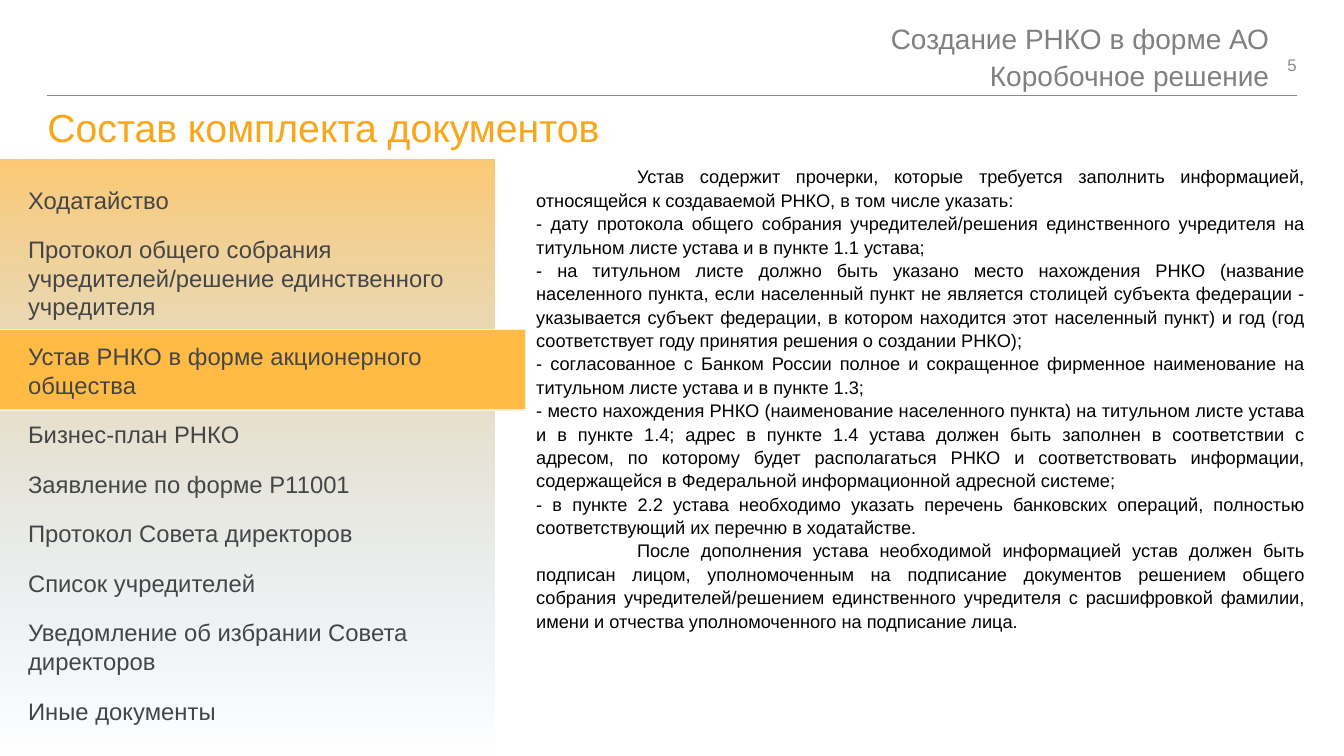
from lxml import etree
from pptx import Presentation
from pptx.dml.color import RGBColor
from pptx.enum.shapes import MSO_CONNECTOR, MSO_SHAPE
from pptx.enum.text import MSO_ANCHOR, MSO_AUTO_SIZE, PP_ALIGN
from pptx.oxml.ns import qn
from pptx.util import Inches, Pt

ORANGE = RGBColor(0xFA, 0xA6, 0x1A)
AMBER = RGBColor(0xFF, 0xBB, 0x44)
CREAM = RGBColor(0xFF, 0xEE, 0xCE)
PANEL_TOP = RGBColor(0xFC, 0xCA, 0x76)
PANEL_BOTTOM = RGBColor(0xA4, 0xC8, 0xE8)
RULE = RGBColor(0x88, 0x8A, 0x8D)
GREY = RGBColor(0x80, 0x80, 0x80)
NUMBER_GREY = RGBColor(0x8C, 0x8C, 0x8C)
DARK = RGBColor(0x44, 0x45, 0x47)
BLACK = RGBColor(0, 0, 0)

WIDTH, HEIGHT = 13.33, 7.5
MARGIN = 0.47
RIGHT = WIDTH - MARGIN

TITLE = "Состав комплекта документов"
HEADER = ["Создание РНКО в форме АО", "Коробочное решение"]
DOCUMENTS = [
    "Ходатайство",
    "Протокол общего собрания учредителей/решение единственного учредителя",
    "Устав РНКО в форме акционерного общества",
    "Бизнес-план РНКО",
    "Заявление по форме Р11001",
    "Протокол Совета директоров",
    "Список учредителей",
    "Уведомление об избрании Совета директоров",
    "Иные документы",
]
CHARTER = [
    "Устав содержит прочерки, которые требуется заполнить информацией, относящейся к создаваемой РНКО, в том числе указать:",
    "- дату протокола общего собрания учредителей/решения единственного учредителя на титульном листе устава и в пункте 1.1 устава;",
    "- на титульном листе должно быть указано место нахождения РНКО (название населенного пункта, если населенный пункт не является столицей субъекта федерации - указывается субъект федерации, в котором находится этот населенный пункт) и год (год соответствует году принятия решения о создании РНКО);",
    "- согласованное с Банком России полное и сокращенное фирменное наименование на титульном листе устава и в пункте 1.3;",
    "- место нахождения РНКО (наименование населенного пункта) на титульном листе устава и в пункте 1.4; адрес в пункте 1.4 устава должен быть заполнен в соответствии с адресом, по которому будет располагаться РНКО и соответствовать информации, содержащейся в Федеральной информационной адресной системе;",
    "- в пункте 2.2 устава необходимо указать перечень банковских операций, полностью соответствующий их перечню в ходатайстве.",
    "После дополнения устава необходимой информацией устав должен быть подписан лицом, уполномоченным на подписание документов решением общего собрания учредителей/решением единственного учредителя с расшифровкой фамилии, имени и отчества уполномоченного на подписание лица.",
]


def write(sp, lines, size, color, align=PP_ALIGN.LEFT, spacing=1.0, after=0,
          inset=(0, 0), anchor=MSO_ANCHOR.TOP):
    """Fill a shape with evenly formatted paragraphs."""
    tf = sp.text_frame
    tf.word_wrap = True
    tf.auto_size = MSO_AUTO_SIZE.NONE
    tf.vertical_anchor = anchor
    tf.margin_left = tf.margin_right = Inches(inset[0])
    tf.margin_top = tf.margin_bottom = Inches(inset[1])
    tf.text = "\n".join(lines)
    for p in tf.paragraphs:
        p.alignment, p.line_spacing, p.space_after = align, spacing, Pt(after)
        for r in p.runs:
            r.font.name, r.font.size = "Arial", Pt(size)
            r.font.color.rgb = color
    return tf.paragraphs


def add_text(slide, box, lines, size, color, **style):
    sp = slide.shapes.add_textbox(*map(Inches, box))
    return write(sp, lines, size, color, **style)


def add_rect(slide, box):
    sp = slide.shapes.add_shape(MSO_SHAPE.RECTANGLE, *map(Inches, box))
    sp.shadow.inherit = False
    return sp


def add_header(slide, left, top, width, height):
    # Running header, slide number and the rule below them
    add_text(slide, (left, top, width - 0.27, height), HEADER, 20, GREY,
             align=PP_ALIGN.RIGHT, spacing=1.1)
    add_text(slide, (left + width - 0.81, top + 0.29, 0.81, 0.35), ["5"], 12,
             NUMBER_GREY, align=PP_ALIGN.RIGHT, anchor=MSO_ANCHOR.MIDDLE)
    y = Inches(top + height)
    rule = slide.shapes.add_connector(MSO_CONNECTOR.STRAIGHT, Inches(left), y,
                                      Inches(left + width), y)
    rule.line.color.rgb, rule.line.width = RULE, Pt(0.5)
    etree.SubElement(rule._element.spPr, qn("a:effectLst"))


def add_title(slide, left, top, width, height):
    title = slide.shapes.title
    title.left, title.top = Inches(left), Inches(top)
    title.width, title.height = Inches(width), Inches(height)
    write(title, [TITLE], 28, ORANGE, spacing=0.9)


def add_menu(slide, left, top, width, height):
    # Panel fading out towards the bottom
    panel = add_rect(slide, (left, top, width, height))
    panel.line.fill.background()
    panel.fill.gradient()
    panel.fill.gradient_angle = 270
    start, end = panel.fill.gradient_stops
    start.color.rgb, end.color.rgb = PANEL_TOP, PANEL_BOTTOM
    rgb = panel._element.spPr.findall(".//" + qn("a:srgbClr"))[-1]
    etree.SubElement(rgb, qn("a:alpha"), val="0")

    # Highlighted entry
    mark = add_rect(slide, (left - 0.01, top + 1.69, width + 0.32, 0.8))
    mark.fill.solid()
    mark.fill.fore_color.rgb = AMBER
    mark.line.color.rgb, mark.line.width = CREAM, Pt(1)

    # Entries
    add_text(slide, (left + 0.18, top + 0.21, width - 0.12, height - 0.42),
             DOCUMENTS, 17, DARK, after=15, inset=(0.1, 0.05))


def add_charter(slide, left, top, width, height):
    paragraphs = add_text(slide, (left, top, width, height), CHARTER, 13, BLACK,
                          align=PP_ALIGN.JUSTIFY, spacing=1.07, inset=(0.1, 0.05))
    for p in paragraphs:
        indent = 0 if p.text.startswith("-") else 1
        pPr = p._p.get_or_add_pPr()
        pPr.set("marL", str(Inches(0.5)))
        pPr.set("indent", str(Inches(indent)))


def main():
    prs = Presentation()
    prs.slide_width, prs.slide_height = Inches(WIDTH), Inches(HEIGHT)
    slide = prs.slides.add_slide(prs.slide_layouts[5])
    add_header(slide, MARGIN, 0.18, RIGHT - MARGIN, 0.77)
    add_title(slide, MARGIN, 1.08, RIGHT - MARGIN, 0.66)
    add_menu(slide, 0, 1.58, 4.9, HEIGHT - 1.58)
    add_charter(slide, 4.72, 1.58, 8.31, 4.77)
    prs.save("out.pptx")


if __name__ == "__main__":
    main()
